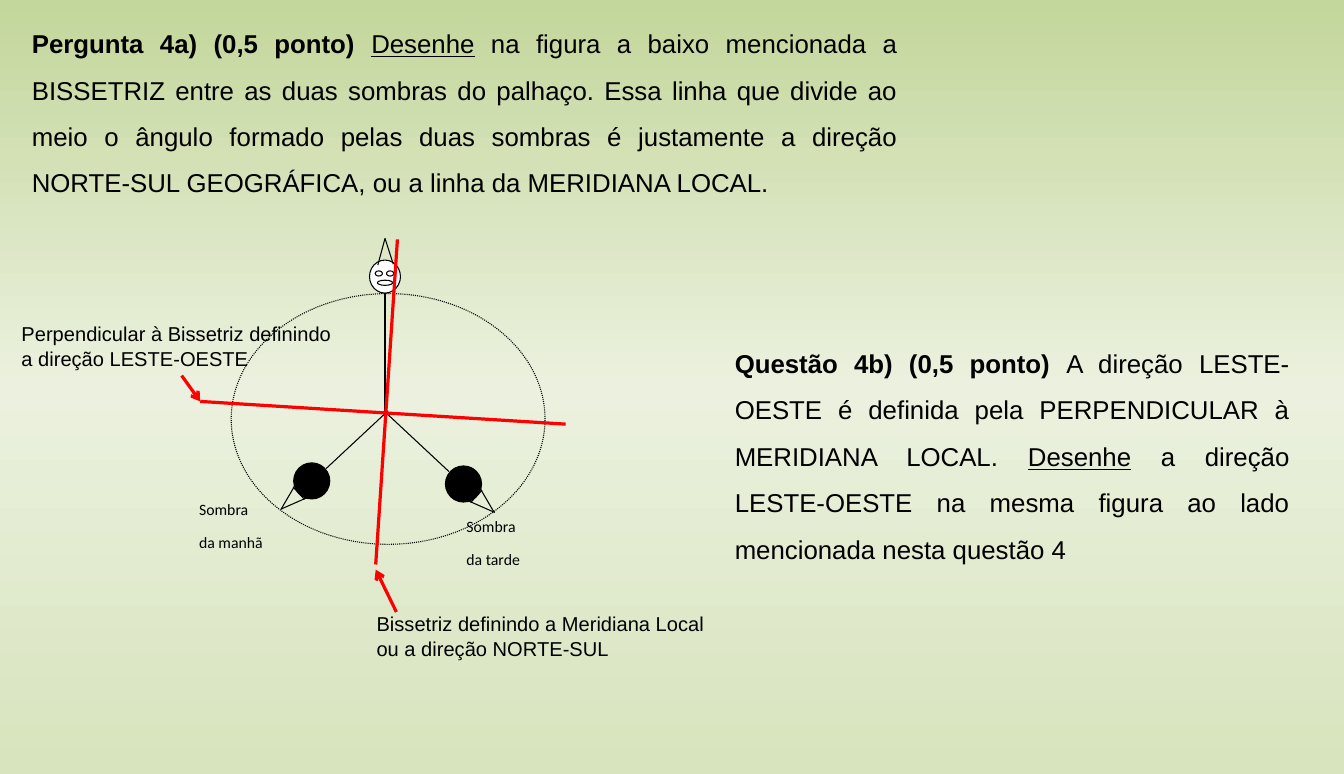
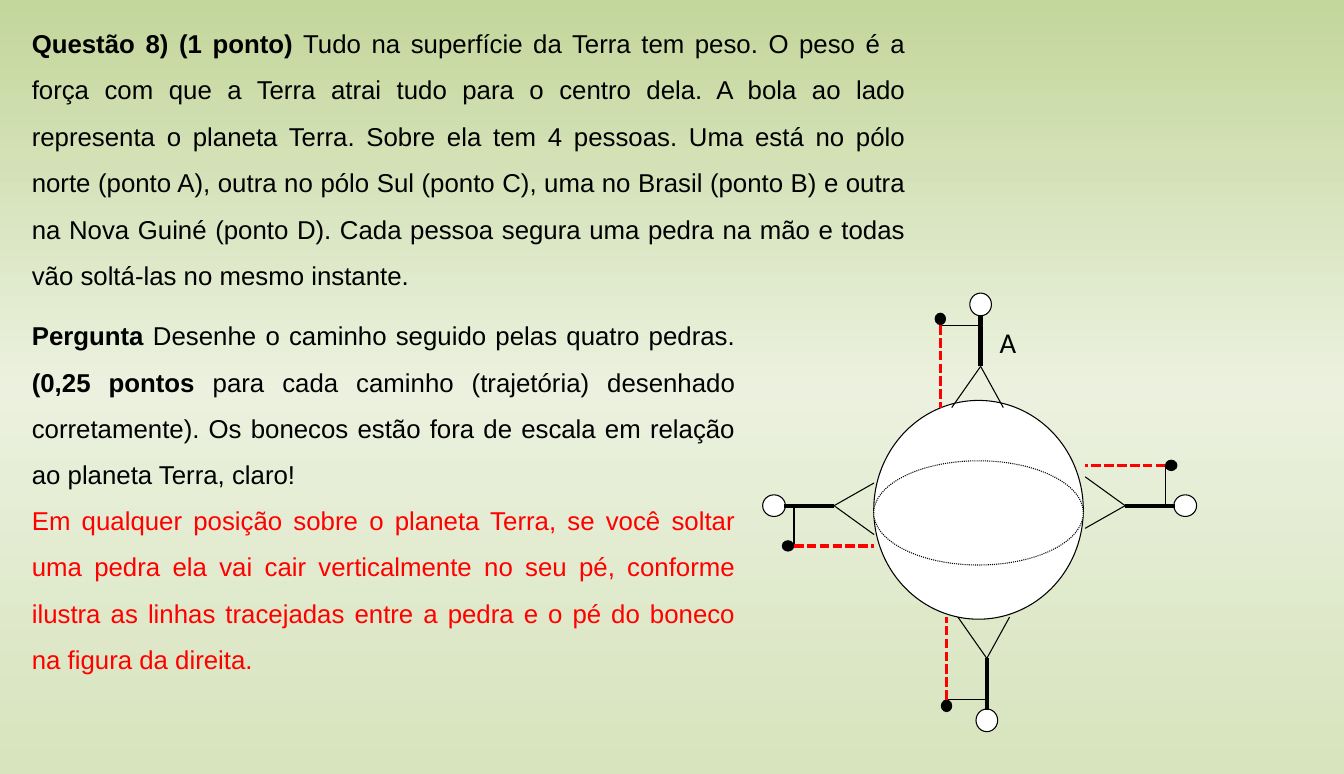
from copy import deepcopy

from lxml.etree import SubElement
from pptx import Presentation
from pptx.dml.color import RGBColor
from pptx.enum.dml import MSO_LINE
from pptx.enum.shapes import MSO_CONNECTOR, MSO_SHAPE
from pptx.enum.text import PP_ALIGN
from pptx.oxml.ns import qn
from pptx.util import Inches, Pt

BLACK = RGBColor(0x00, 0x00, 0x00)
WHITE = RGBColor(0xFF, 0xFF, 0xFF)
RED = RGBColor(0xFF, 0x00, 0x00)
GRADIENT = [
    (0, RGBColor(0xC3, 0xD6, 0x9B)),
    (0.5, RGBColor(0xEB, 0xF1, 0xDE)),
    (1, RGBColor(0xD7, 0xE4, 0xBD)),
]
THIN, BODY, ANSWER = 0.75, 3, 2.25
BOLD, UNDERLINED, PLAIN = "bold", "underlined", "plain"

# Question texts: box, colour, runs
BISECTOR_QUESTIONS = [
    ((0.21, 0.07, 8.58, 1.92), BLACK, [
        ("Pergunta 4a) (0,5 ponto) ", BOLD),
        ("Desenhe", UNDERLINED),
        (" na figura a baixo mencionada a BISSETRIZ entre as duas sombras do "
         "palhaço. Essa linha que divide ao meio o ângulo formado pelas duas "
         "sombras é justamente a direção NORTE-SUL GEOGRÁFICA, ou a linha da "
         "MERIDIANA LOCAL.", PLAIN)]),
    ((7.02, 3.17, 5.57, 2.37), BLACK, [
        ("Questão 4b) (0,5 ponto) ", BOLD),
        ("A direção LESTE-OESTE é definida pela PERPENDICULAR à MERIDIANA "
         "LOCAL. ", PLAIN),
        ("Desenhe", UNDERLINED),
        (" a direção LESTE-OESTE na mesma figura ao lado mencionada nesta "
         "questão 4", PLAIN)]),
]
GRAVITY_QUESTIONS = [
    ((0.21, 0.07, 8.66, 2.83), BLACK, [
        ("Questão 8) (1 ponto)", BOLD),
        (" Tudo na superfície da Terra tem peso. O peso é a força com que a "
         "Terra atrai tudo para o centro dela. A bola ao lado representa o "
         "planeta Terra. Sobre ela tem 4 pessoas. Uma está no pólo norte "
         "(ponto A), outra no pólo Sul (ponto C), uma no Brasil (ponto B) e "
         "outra na Nova Guiné (ponto D). Cada pessoa segura uma pedra na mão "
         "e todas vão soltá-las no mesmo instante.", PLAIN)]),
    ((0.21, 2.9, 7.01, 1.92), BLACK, [
        ("Pergunta ", BOLD),
        ("Desenhe o caminho seguido pelas quatro pedras. ", PLAIN),
        ("(0,25 pontos ", BOLD),
        ("para cada caminho (trajetória) desenhado corretamente). Os bonecos "
         "estão fora de escala em relação ao planeta Terra, claro!", PLAIN)]),
    ((0.21, 4.69, 7.01, 1.92), RED, [
        ("Em qualquer posição sobre o planeta Terra, se você soltar uma pedra "
         "ela vai cair verticalmente no seu pé, conforme ilustra as linhas "
         "tracejadas entre a pedra e o pé do boneco na figura da direita.",
         PLAIN)]),
]

# Answers: label, label box, arrow, answer line
ANSWERS = [
    ("Bissetriz definindo a Meridiana Local ou a direção NORTE-SUL",
     (3.55, 5.88, 3.47, 0.57), ((3.84, 5.93), (3.64, 5.52)),
     ((3.85, 2.32), (3.64, 5.47))),
    ("Perpendicular à Bissetriz definindo a direção LESTE-OESTE",
     (0.11, 3.07, 3.3, 0.57), ((1.76, 3.64), (1.94, 3.89)),
     ((1.94, 3.89), (5.48, 4.11))),
]

# Clown: ellipses are centre and size
CLOWN_HEAD = ((3.73, 2.68), (0.3, 0.32))
CLOWN_FEATURES = [((3.78, 2.65), (0.07, 0.05)), ((3.67, 2.65), (0.07, 0.05)),
                  ((3.73, 2.74), (0.15, 0.05))]
CLOWN_LINES = [((3.73, 2.84), (3.73, 4.06)), ((3.73, 2.31), (3.66, 2.57)),
               ((3.73, 2.31), (3.81, 2.56))]

# Morning shadow; the afternoon one is its mirror image, slightly lower
SHADOW_HEAD = (3.02, 4.66)
SHADOW_LINES = [((3.16, 4.54), (3.76, 3.98)), ((2.73, 4.93), (2.98, 4.82)),
                ((2.72, 4.94), (2.86, 4.7)), ((2.84, 4.72), (2.95, 4.84))]
MIRROR_SUM, MIRROR_DROP = 7.51, 0.03
SHADOWS = [
    (["Sombra", "da manhã"], (1.83, 4.79, 1.2, 0.68), lambda x, y: (x, y)),
    (["Sombra", "da tarde"], (4.42, 4.96, 1.2, 0.68),
     lambda x, y: (MIRROR_SUM - x, y + MIRROR_DROP)),
]

# People on the Earth: hip, outward direction, direction of the hand
PEOPLE = [
    ((9.5, 3.55), (0, -1), (-1, 0)),
    ((8.08, 4.9), (-0.97, 0), (0, 1)),
    ((10.9, 4.9), (0.97, 0), (0, -1)),
    ((9.56, 6.38), (0, 1), (-1, 0)),
]
ARM_HEIGHT, ARM_REACH, FOOT_DEPTH = 0.4, 0.39, -0.4
EARTH_CENTRE = (9.48, 4.94)


def add_line(slide, start, end, color=BLACK, width=THIN, dash=None, arrow=False):
    line = slide.shapes.add_connector(
        MSO_CONNECTOR.STRAIGHT, *(Inches(v) for v in (*start, *end)))
    line.line.color.rgb = color
    line.line.width = Pt(width)
    if dash:
        line.line.dash_style = dash
    properties = line._element.spPr
    if arrow:
        SubElement(properties.find(qn("a:ln")), qn("a:tailEnd"), type="arrow")
    SubElement(properties, qn("a:effectLst"))


def add_ellipse(slide, centre, size, fill=WHITE, dash=None):
    left, top = (c - s / 2 for c, s in zip(centre, size))
    ellipse = slide.shapes.add_shape(
        MSO_SHAPE.OVAL, *(Inches(v) for v in (left, top, *size)))
    ellipse.shadow.inherit = False
    if fill is None:
        ellipse.fill.background()
    else:
        ellipse.fill.solid()
        ellipse.fill.fore_color.rgb = fill
    ellipse.line.color.rgb = BLACK
    ellipse.line.width = Pt(THIN)
    if dash:
        ellipse.line.dash_style = dash


def add_text(slide, box, paragraphs, size, font="Arial", color=BLACK,
             align=PP_ALIGN.LEFT, spacing=None, after=0):
    """Each paragraph is a list of (words, style) runs."""
    frame = slide.shapes.add_textbox(*(Inches(v) for v in box)).text_frame
    frame.word_wrap = True
    for i, runs in enumerate(paragraphs):
        paragraph = frame.add_paragraph() if i else frame.paragraphs[0]
        paragraph.alignment = align
        paragraph.space_after = Pt(after)
        if spacing:
            paragraph.line_spacing = spacing
        for words, style in runs:
            run = paragraph.add_run()
            run.text = words
            run.font.name = font
            run.font.size = Pt(size)
            run.font.color.rgb = color
            run.font.bold = style == BOLD
            run.font.underline = style == UNDERLINED


def add_questions(slide, questions):
    for box, color, runs in questions:
        add_text(slide, box, [runs], 18, color=color,
                 align=PP_ALIGN.JUSTIFY, spacing=1.5)


def add_caption(slide, box, lines, size, align=PP_ALIGN.LEFT):
    add_text(slide, box, [[(words, PLAIN)] for words in lines], size,
             font="Calibri", align=align, after=10)


def set_background(master):
    fill = master.background.fill
    fill.gradient()
    fill.gradient_angle = 270
    stop_list = master.element.find(".//" + qn("a:gsLst"))
    stop_list.insert(1, deepcopy(stop_list[0]))
    for stop, (position, color) in zip(fill.gradient_stops, GRADIENT):
        stop.position = position
        stop.color.rgb = color


def add_clown(slide):
    add_ellipse(slide, *CLOWN_HEAD)
    for start, end in CLOWN_LINES:
        add_line(slide, start, end)
    for centre, size in CLOWN_FEATURES:
        add_ellipse(slide, centre, size)


def add_person(slide, hip, outward, hand):
    def at(height, side):
        return tuple(h + height * o + side * s
                     for h, o, s in zip(hip, outward, hand))

    def turned(width, height):
        return (width, height) if outward[0] == 0 else (height, width)

    add_ellipse(slide, at(0.6, 0), turned(0.21, 0.22))
    add_line(slide, hip, at(0.5, 0), width=BODY)
    for foot in (0.28, -0.22):
        add_line(slide, hip, at(FOOT_DEPTH, foot))
    palm = at(ARM_HEIGHT, ARM_REACH)
    add_line(slide, at(ARM_HEIGHT, 0), palm)
    add_ellipse(slide, at(0.46, ARM_REACH), turned(0.1, 0.11), BLACK)
    add_line(slide, palm, at(FOOT_DEPTH, ARM_REACH), RED, ANSWER,
             MSO_LINE.SQUARE_DOT)


def build_bisector_slide(slide):
    add_questions(slide, BISECTOR_QUESTIONS)
    add_ellipse(slide, (3.76, 4.06), (3.04, 2.43), None, MSO_LINE.ROUND_DOT)
    add_clown(slide)
    for caption, box, place in SHADOWS:
        add_ellipse(slide, place(*SHADOW_HEAD), (0.35, 0.35), BLACK)
        for start, end in SHADOW_LINES:
            add_line(slide, place(*start), place(*end))
        add_caption(slide, box, caption, 11)
    for label, box, arrow, direction in ANSWERS:
        add_line(slide, *direction, RED, ANSWER)
        add_text(slide, box, [[(label, PLAIN)]], 14)
        add_line(slide, *arrow, RED, ANSWER, arrow=True)


def build_gravity_slide(slide):
    add_questions(slide, GRAVITY_QUESTIONS)
    add_ellipse(slide, EARTH_CENTRE, (2.03, 2.12))
    for person in PEOPLE:
        add_person(slide, *person)
    add_ellipse(slide, (EARTH_CENTRE[0], 4.97), (2.03, 1.01),
                dash=MSO_LINE.ROUND_DOT)
    add_caption(slide, (9.23, 3.1, 1.07, 0.56), ["A"], 20, PP_ALIGN.CENTER)


def main():
    deck = Presentation()
    deck.slide_width, deck.slide_height = Inches(13.02), Inches(7.5)
    set_background(deck.slide_master)
    for build in (build_bisector_slide, build_gravity_slide):
        build(deck.slides.add_slide(deck.slide_layouts[6]))
    deck.save("out.pptx")


if __name__ == "__main__":
    main()
